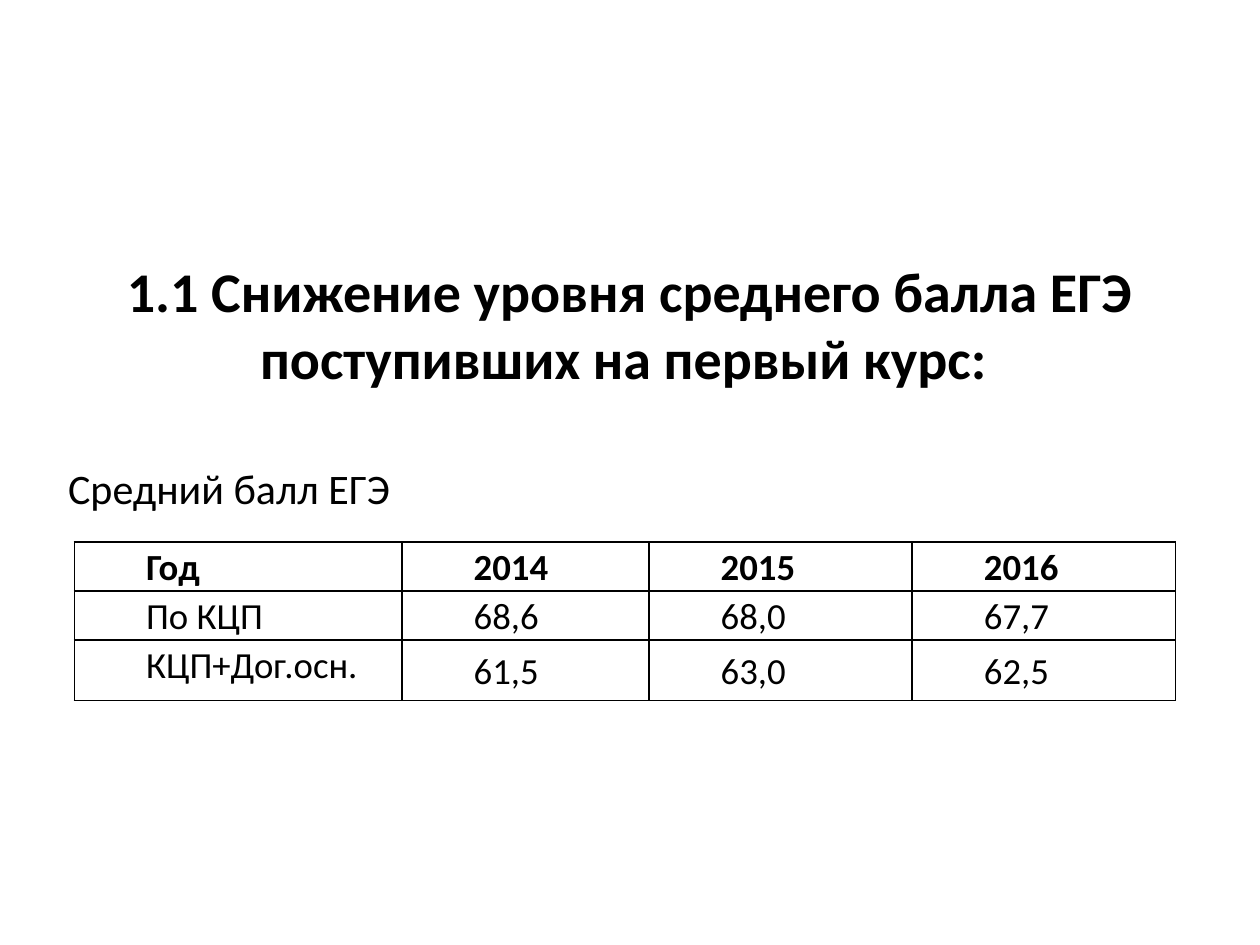
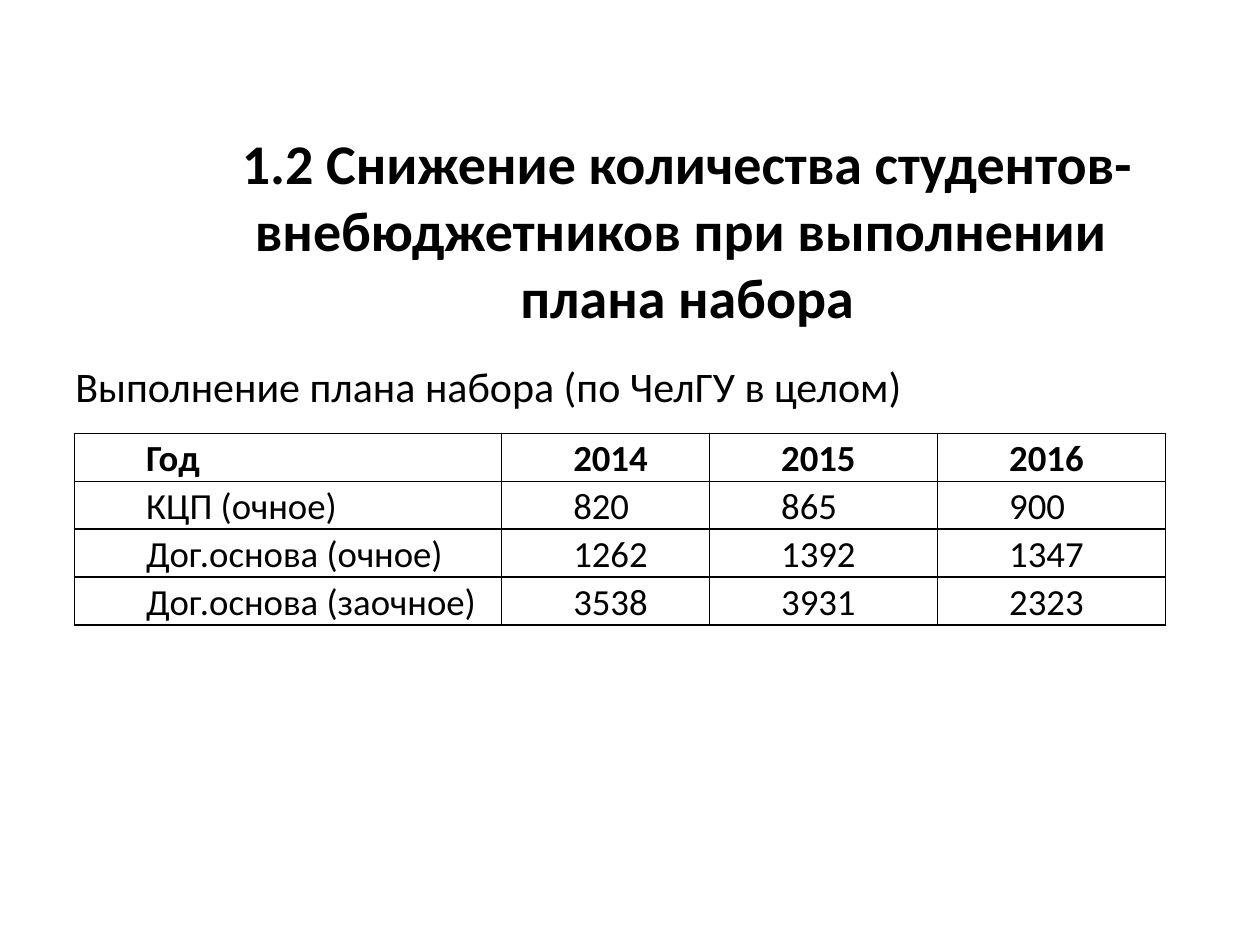
from dataclasses import dataclass

from lxml.etree import SubElement
from pptx import Presentation
from pptx.dml.color import RGBColor
from pptx.enum.text import MSO_ANCHOR, PP_ALIGN
from pptx.oxml.ns import qn
from pptx.slide import Slide
from pptx.table import _Cell
from pptx.text.text import TextFrame
from pptx.util import Inches, Pt

COLORS = {"text": "000000", "border": "000000"}
FONT = "Calibri"
HEADER = ("Год", "2014", "2015", "2016")
TABLE_LEFT = 0.59


@dataclass(frozen=True)
class Box:
    left: float
    top: float
    width: float
    height: float
    text: str
    margin_left: float = 0.1


@dataclass(frozen=True)
class ScoreTable:
    top: float
    col_widths: tuple[float, ...]
    row_heights: tuple[float, ...]
    rows: tuple[tuple[str, ...], ...]


@dataclass(frozen=True)
class TableSlide:
    title: Box
    caption: Box
    table: ScoreTable


SLIDES = (
    TableSlide(
        Box(0.59, 1.86, 8.82, 1.42,
            "1.1 Снижение уровня среднего балла ЕГЭ поступивших на первый курс: "),
        Box(0.12, 3.62, 9.39, 2.88, "Средний балл ЕГЭ", margin_left=0.42),
        ScoreTable(4.3, (2.6, 1.96, 2.09, 2.09), (0.39, 0.39, 0.48), (
            ("По КЦП", "68,6", "68,0", "67,7"),
            ("КЦП+Дог.осн.", "61,5", "63,0", "62,5"),
        )),
    ),
    TableSlide(
        Box(0.91, 1.07, 9.09, 1.5,
            "1.2 Снижение количества студентов- внебюджетников при выполнении \v"
            "плана набора"),
        Box(0.5, 2.81, 9, 3.89, "Выполнение плана набора (по ЧелГУ в целом)"),
        ScoreTable(3.44, (3.39, 1.65, 1.81, 1.81), (0.38,) * 4, (
            ("КЦП (очное)", "820", "865", "900"),
            ("Дог.основа (очное)", "1262", "1392", "1347"),
            ("Дог.основа (заочное)", "3538", "3931", "2323"),
        )),
    ),
)


def style_text(tf: TextFrame, size: int, bold: bool) -> None:
    for p in tf.paragraphs:
        p.font.name = FONT
        p.font.size = Pt(size)
        p.font.bold = bold
        p.font.color.rgb = RGBColor.from_string(COLORS["text"])


def add_text(s: Slide, box: Box, size: int, bold: bool = False) -> TextFrame:
    sp = s.shapes.add_textbox(Inches(box.left), Inches(box.top),
                              Inches(box.width), Inches(box.height))
    tf = sp.text_frame
    tf.word_wrap = True
    tf.margin_left = Inches(box.margin_left)
    tf.text = box.text
    style_text(tf, size, bold)
    return tf


def add_title(s: Slide, box: Box) -> None:
    tf = add_text(s, box, 32, bold=True)
    tf.vertical_anchor = MSO_ANCHOR.MIDDLE
    tf.paragraphs[0].alignment = PP_ALIGN.CENTER


def set_borders(cell: _Cell) -> None:
    """Draw a 1 pt line on all four sides; call before setting the fill."""
    tc_pr = cell._tc.get_or_add_tcPr()
    for side in ("a:lnL", "a:lnR", "a:lnT", "a:lnB"):
        ln = SubElement(tc_pr, qn(side), w=str(Pt(1)))
        fill = SubElement(ln, qn("a:solidFill"))
        SubElement(fill, qn("a:srgbClr"), val=COLORS["border"])


def fill_cell(cell: _Cell, text: str, is_header: bool, is_label: bool) -> None:
    set_borders(cell)
    cell.fill.background()
    cell.margin_left = cell.margin_right = Inches(0.07)
    cell.margin_top = cell.margin_bottom = 0
    top_aligned = is_label and not is_header
    cell.vertical_anchor = MSO_ANCHOR.TOP if top_aligned else MSO_ANCHOR.MIDDLE
    cell.text = text
    p = cell.text_frame.paragraphs[0]
    p.line_spacing = 1.07
    p._p.get_or_add_pPr().set("marL", str(Inches(0.5)))
    style_text(cell.text_frame, 21, is_header)


def add_score_table(s: Slide, spec: ScoreTable) -> None:
    rows = (HEADER, *spec.rows)
    table = s.shapes.add_table(
        len(rows), len(HEADER), Inches(TABLE_LEFT), Inches(spec.top),
        Inches(sum(spec.col_widths)), Inches(sum(spec.row_heights))).table
    table.first_row = table.horz_banding = False
    for column, width in zip(table.columns, spec.col_widths):
        column.width = Inches(width)
    for i, (values, height) in enumerate(zip(rows, spec.row_heights)):
        table.rows[i].height = Inches(height)
        for j, value in enumerate(values):
            fill_cell(table.cell(i, j), value, is_header=i == 0, is_label=j == 0)


def main() -> None:
    prs = Presentation()
    prs.slide_width, prs.slide_height = Inches(10), Inches(7.5)
    for content in SLIDES:
        s = prs.slides.add_slide(prs.slide_layouts[6])
        add_title(s, content.title)
        add_text(s, content.caption, 24)
        add_score_table(s, content.table)
    prs.save("out.pptx")


if __name__ == "__main__":
    main()
